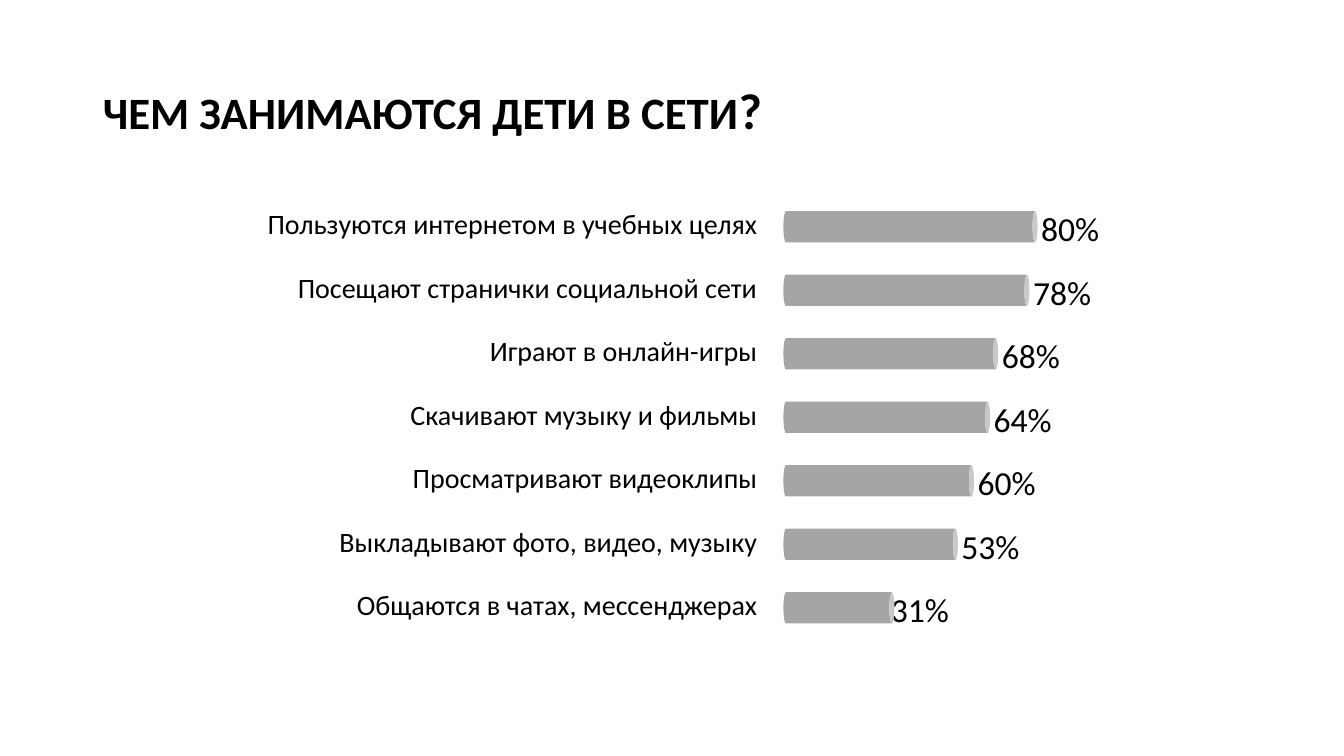
from pptx import Presentation
from pptx import util as u
from pptx.dml import color
from pptx.enum import shapes, text

INK = "000000"
BAR_FILL = "A5A5A5"
ROW_STEP = 0.63
FIRST_BAR_MIDDLE = 2.25
BAR_LEFT = 7.77
BAR_THICKNESS = 0.31

# Label, share, bar length, left edge of the share
ACTIVITIES = [
    ("Пользуются интернетом в учебных целях", "80%", 2.52, 10.13),
    ("Посещают странички социальной сети", "78%", 2.44, 10.05),
    ("Играют в онлайн-игры", "68%", 2.13, 9.74),
    ("Скачивают музыку и фильмы", "64%", 2.05, 9.66),
    ("Просматривают видеоклипы", "60%", 1.89, 9.5),
    ("Выкладывают фото, видео, музыку", "53%", 1.73, 9.34),
    ("Общаются в чатах, мессенджерах", "31%", 1.1, 8.64),
]


def rgb(value):
    """Turn a hex string into a colour."""
    return color.RGBColor.from_string(value)


def apply_format(target, values):
    """Set every attribute named in a dict of format values."""
    for name, value in values.items():
        setattr(target, name, value)


def add_span(para, words, size, bold=False):
    """Add a run of black Calibri text."""
    span = para.add_run()
    span.text = words
    apply_format(span.font, {"name": "Calibri", "size": u.Pt(size), "bold": bold})
    span.font.color.rgb = rgb(INK)


def set_title(page):
    """Place and fill the title placeholder."""
    title = page.shapes.title
    apply_format(title, {"left": u.Inches(0.92), "top": u.Inches(0.4),
                         "width": u.Inches(11.5), "height": u.Inches(1.45)})
    apply_format(title.text_frame, {"auto_size": text.MSO_AUTO_SIZE.NONE,
                                    "vertical_anchor": text.MSO_ANCHOR.MIDDLE})
    para = title.text_frame.paragraphs[0]
    apply_format(para, {"alignment": text.PP_ALIGN.LEFT, "line_spacing": 0.9})
    add_span(para, "ЧЕМ ЗАНИМАЮТСЯ ДЕТИ В СЕТИ", 32, True)
    add_span(para, "?", 36, True)


def add_label(page, words, left, top, width, size):
    """Add a right-aligned line of text."""
    box = page.shapes.add_textbox(u.Inches(left), u.Inches(top),
                                  u.Inches(width), u.Inches(0.42))
    apply_format(box.text_frame, {"word_wrap": True,
                                  "auto_size": text.MSO_AUTO_SIZE.SHAPE_TO_FIT_TEXT})
    para = box.text_frame.paragraphs[0]
    apply_format(para, {"alignment": text.PP_ALIGN.RIGHT,
                        "line_spacing": u.Pt(22.8)})
    add_span(para, words, size)


def add_bar(page, middle, length):
    """Add a cylinder lying on its side, starting at the common left edge."""
    left = BAR_LEFT + (length - BAR_THICKNESS) / 2
    bar = page.shapes.add_shape(shapes.MSO_SHAPE.CAN, u.Inches(left),
                                u.Inches(middle - length / 2),
                                u.Inches(BAR_THICKNESS), u.Inches(length))
    bar.rotation = 90
    bar.adjustments[0] = 0.16
    bar.shadow.inherit = False
    bar.fill.solid()
    bar.fill.fore_color.rgb = rgb(BAR_FILL)
    bar.line.fill.background()


def main():
    """Build the slide and save it."""
    deck = Presentation()
    apply_format(deck, {"slide_width": u.Inches(13.33),
                        "slide_height": u.Inches(7.5)})
    page = deck.slides.add_slide(deck.slide_layouts[5])
    set_title(page)
    for row, (activity, share, length, share_left) in enumerate(ACTIVITIES):
        middle = FIRST_BAR_MIDDLE + row * ROW_STEP
        add_label(page, activity, 2.26, middle - 0.23, 5.35, 20)
        add_label(page, share, share_left, middle - 0.15, 0.87, 24)
        add_bar(page, middle, length)
    deck.save("out.pptx")


if __name__ == "__main__":
    main()
